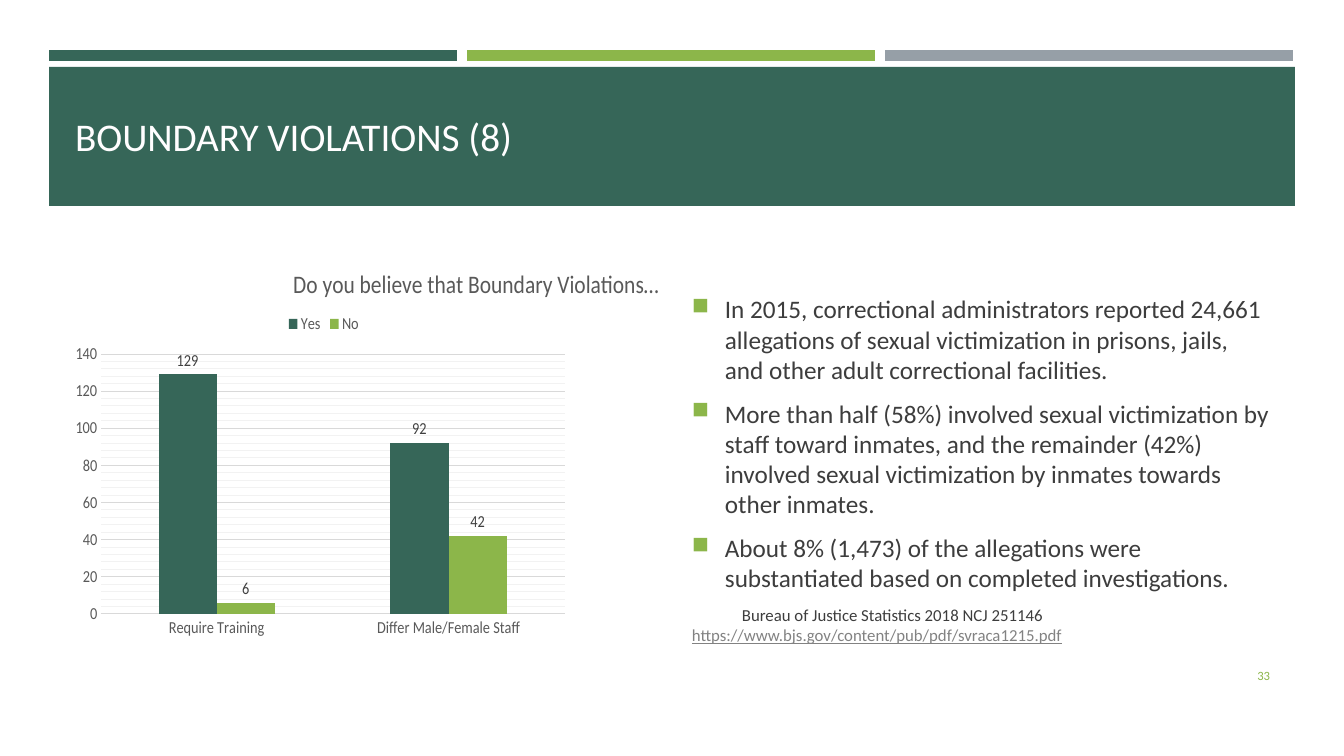
import lxml.etree
import pptx
import pptx.chart.data
import pptx.dml.color
import pptx.enum.chart
import pptx.enum.shapes
import pptx.enum.text
import pptx.oxml
import pptx.oxml.ns
import pptx.util

RGBColor = pptx.dml.color.RGBColor
GREEN = RGBColor(0x36, 0x66, 0x58)
LIME = RGBColor(0x8C, 0xB6, 0x4A)
GRAY = RGBColor(0x96, 0x9F, 0xA7)
WHITE = RGBColor(0xFF, 0xFE, 0xFF)
INK = RGBColor(0x3D, 0x3D, 0x3D)
LINK = RGBColor(0x82, 0x82, 0x82)
AXIS_TEXT = RGBColor(0x59, 0x59, 0x59)
LABEL_TEXT = RGBColor(0x40, 0x40, 0x40)
GRID = RGBColor(0xD9, 0xD9, 0xD9)
MINOR_GRID = RGBColor(0xF2, 0xF2, 0xF2)
PX_PER_INCH = 100.8
FONT = "Calibri"

FACTS = (
    "In 2015, correctional administrators reported 24,661 allegations of sexual "
    "victimization in prisons, jails, and other adult correctional facilities.",
    "More than half (58%) involved sexual victimization by staff toward inmates, and the "
    "remainder (42%) involved sexual victimization by inmates towards other inmates.",
    "About 8% (1,473) of the allegations were substantiated based on completed investigations.",
)
SOURCE = "Bureau of Justice Statistics 2018 NCJ 251146"
ADDRESS = "https://www.bjs.gov/content/pub/pdf/svraca1215.pdf"


def px(length):
    return pptx.util.Emu(round(length * 914400 / PX_PER_INCH))


def assign(target, values):
    for name, value in values.items():
        setattr(target, name, value)


def add_element(parent, tag, **attributes):
    element = lxml.etree.SubElement(parent, pptx.oxml.ns.qn(tag))
    for name, value in attributes.items():
        element.set(name, str(value))
    return element


def style_font(font, size, color, **extra):
    assign(font, {"name": FONT, "size": pptx.util.Pt(size), **extra})
    font.color.rgb = color


def style_line(line, color):
    line.color.rgb = color
    line.width = pptx.util.Pt(0.75)


def add_span(para, text, size, color, **extra):
    span = para.add_run()
    span.text = text
    style_font(span.font, size, color, **extra)


def add_bar(page, box, color):
    bar = page.shapes.add_shape(pptx.enum.shapes.MSO_SHAPE.RECTANGLE, *map(px, box))
    bar.shadow.inherit = False
    bar.fill.solid()
    bar.fill.fore_color.rgb = color
    bar.line.fill.background()
    return bar


def add_text_box(page, box, anchor):
    frame = page.shapes.add_textbox(*map(px, box)).text_frame
    assign(frame, {"word_wrap": True, "vertical_anchor": anchor})
    return frame


def add_header(page, box):
    left, top, width, height = box
    gap = 10
    bar_width = (width - 2 * gap) // 3
    for index, color in enumerate((GREEN, LIME, GRAY)):
        add_bar(page, (left + index * (bar_width + gap), top, bar_width, 11), color)
    band = add_bar(page, (left, top + 17, width, height - 17), GREEN)
    title = page.shapes.title
    band.element.addnext(title.element)
    place = (left + 16, top + 31, width - 30, 109)
    assign(title, dict(zip(("left", "top", "width", "height"), map(px, place))))
    title.text_frame.vertical_anchor = pptx.enum.text.MSO_ANCHOR.MIDDLE
    para = title.text_frame.paragraphs[0]
    para.alignment = pptx.enum.text.PP_ALIGN.LEFT
    add_span(para, "BOUNDARY VIOLATIONS (8)", 28, WHITE)


def set_layout(chart, tag, index, **values):
    element = chart.element.find(".//" + pptx.oxml.ns.qn(tag))
    for old in element.findall(pptx.oxml.ns.qn("c:layout")):
        element.remove(old)
    layout = add_element(element, "c:layout")
    manual = add_element(layout, "c:manualLayout")
    for name, value in values.items():
        add_element(manual, "c:" + name, val=value)
    element.insert(index, layout)


def style_minor_grid(chart):
    grid = chart.element.find(".//" + pptx.oxml.ns.qn("c:minorGridlines"))
    line = add_element(add_element(grid, "c:spPr"), "a:ln", w=pptx.util.Pt(0.75))
    add_element(add_element(line, "a:solidFill"), "a:srgbClr", val=MINOR_GRID)


def add_survey_chart(page, box):
    enums = pptx.enum.chart
    data = pptx.chart.data.CategoryChartData()
    data.categories = ("Require Training", "Differ Male/Female Staff")
    data.add_series("Yes", (129, 92))
    data.add_series("No", (6, 42))
    chart = page.shapes.add_chart(
        enums.XL_CHART_TYPE.COLUMN_CLUSTERED, *map(px, box), data).chart
    style_font(chart.font, 12, AXIS_TEXT)

    chart.has_title = True
    heading = chart.chart_title.text_frame.paragraphs[0]
    add_span(heading, "Do you believe that Boundary Violations…", 18, AXIS_TEXT, bold=False)

    chart.has_legend = True
    assign(chart.legend, {"position": enums.XL_LEGEND_POSITION.TOP,
                          "include_in_layout": False})
    style_font(chart.legend.font, 12, AXIS_TEXT)

    plot = chart.plots[0]
    assign(plot, {"gap_width": 199, "overlap": 0, "vary_by_categories": False})
    for series, color in zip(plot.series, (GREEN, LIME)):
        series.format.fill.solid()
        series.format.fill.fore_color.rgb = color
        labels = series.data_labels
        assign(labels, {"show_value": True,
                        "position": enums.XL_LABEL_POSITION.OUTSIDE_END})
        style_font(labels.font, 12, LABEL_TEXT)

    for axis in (chart.category_axis, chart.value_axis):
        assign(axis, {"major_tick_mark": enums.XL_TICK_MARK.NONE,
                      "minor_tick_mark": enums.XL_TICK_MARK.NONE})
        style_font(axis.tick_labels.font, 12, AXIS_TEXT)
    style_line(chart.category_axis.format.line, GRID)
    values = chart.value_axis
    assign(values, {"minimum_scale": 0, "maximum_scale": 140, "major_unit": 20,
                    "minor_unit": 4, "has_major_gridlines": True,
                    "has_minor_gridlines": True})
    values.format.line.fill.background()
    style_line(values.major_gridlines.format.line, GRID)
    style_minor_grid(chart)

    set_layout(chart, "c:title", 1, xMode="edge", yMode="edge", x=0.44, y=0.04)
    set_layout(chart, "c:legend", 1, xMode="edge", yMode="edge", x=0.43, y=0.16)
    set_layout(chart, "c:plotArea", 0, layoutTarget="inner", xMode="edge", yMode="edge",
               x=0.07, y=0.27, w=0.91, h=0.65)


def add_bullet(para):
    properties = para._p.get_or_add_pPr()
    properties.set("marL", str(px(33)))
    properties.set("indent", str(-px(33)))
    add_element(add_element(properties, "a:buClr"), "a:srgbClr", val=LIME)
    add_element(properties, "a:buSzPct", val=92000)
    add_element(properties, "a:buChar", char="■")


def add_facts(page, box):
    frame = add_text_box(page, box, pptx.enum.text.MSO_ANCHOR.BOTTOM)
    frame.margin_bottom = 0
    for index, fact in enumerate(FACTS):
        para = frame.add_paragraph() if index else frame.paragraphs[0]
        assign(para, {"space_before": pptx.util.Pt(3.6), "space_after": pptx.util.Pt(6)})
        add_bullet(para)
        add_span(para, fact, 18, INK)
    para = frame.add_paragraph()
    para.space_before = pptx.util.Pt(2.4)
    para._p.get_or_add_pPr().set("indent", str(px(50)))
    add_span(para, SOURCE, 12, INK)
    para.add_line_break()
    add_span(para, ADDRESS, 12, LINK, underline=True)


def add_page_number(page, box):
    frame = add_text_box(page, box, pptx.enum.text.MSO_ANCHOR.MIDDLE)
    para = frame.paragraphs[0]
    para.alignment = pptx.enum.text.PP_ALIGN.RIGHT
    add_span(para, "33", 9, LIME)


def main():
    deck = pptx.Presentation()
    assign(deck, {"slide_width": px(1344), "slide_height": px(756)})
    page = deck.slides.add_slide(deck.slide_layouts[5])
    add_header(page, (49, 50, 1246, 156))
    add_survey_chart(page, (65, 246, 598, 400))
    add_facts(page, (682, 246, 598, 399))
    add_page_number(page, (1164, 656, 116, 40))
    deck.save("out.pptx")


if __name__ == "__main__":
    main()
